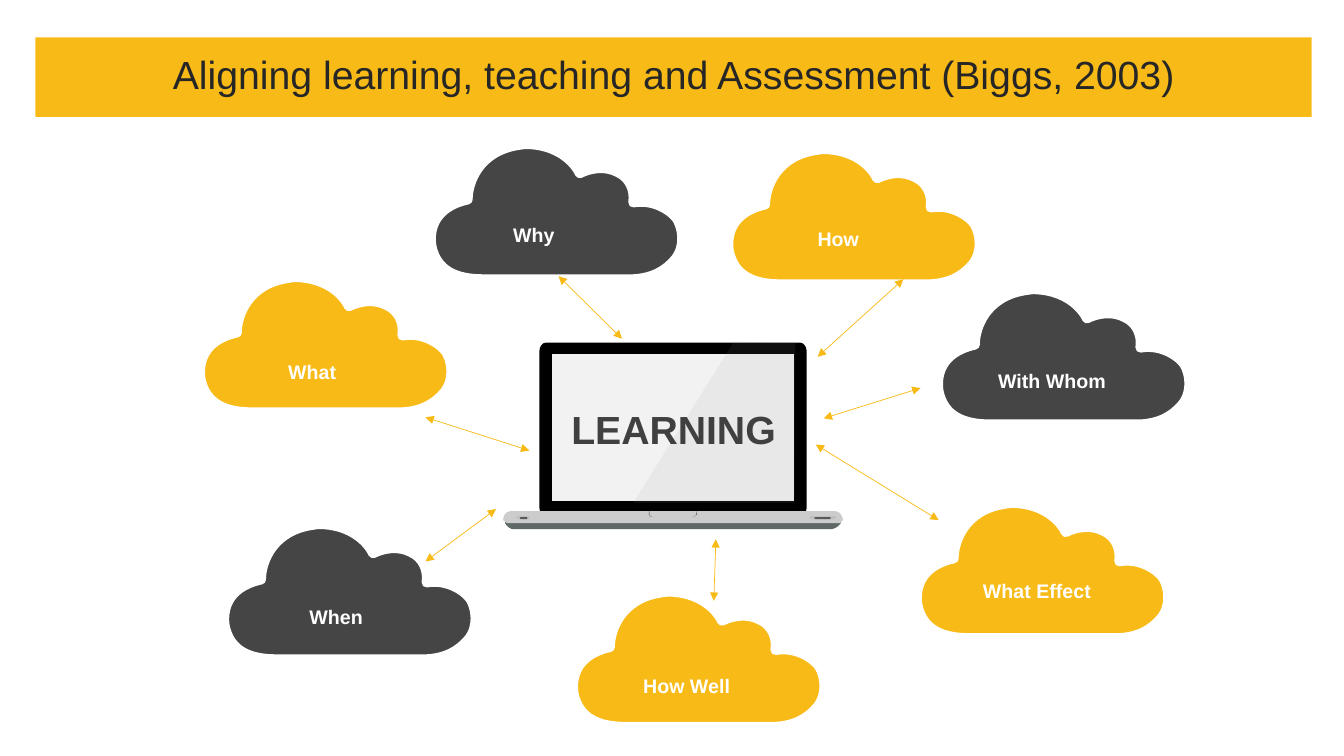
import pptx
import pptx.util
import pptx.oxml
import pptx.oxml.xmlchemy
from pptx.dml.color import RGBColor
from pptx.enum.shapes import MSO_CONNECTOR, MSO_SHAPE
from pptx.enum.text import MSO_ANCHOR, MSO_AUTO_SIZE, PP_ALIGN
from pptx.oxml.ns import qn

Inches, Pt = pptx.util.Inches, pptx.util.Pt
new_element = pptx.oxml.xmlchemy.OxmlElement

YELLOW = RGBColor(0xF8, 0xBA, 0x16)
DARK = RGBColor(0x45, 0x45, 0x45)
WHITE = RGBColor(0xFF, 0xFF, 0xFF)
INK = RGBColor(0x26, 0x26, 0x26)
BLACK = RGBColor(0x00, 0x00, 0x00)
SCREEN = RGBColor(0xF2, 0xF2, 0xF2)
SCREEN_TEXT = RGBColor(0x40, 0x40, 0x40)
BASE = RGBColor(0xCC, 0xCC, 0xCC)
LIP = RGBColor(0x5F, 0x67, 0x67)
NOTCH = RGBColor(0x4D, 0x4D, 0x4D)
PORT = RGBColor(0xBF, 0xBF, 0xBF)
SLOT = RGBColor(0x59, 0x59, 0x59)
GLARE = RGBColor(0x99, 0x99, 0x99)

# Outlines: a start point, then lines (x, y) or Bezier curves (x1, y1, x2, y2, x, y)
CLOUD = [(0.93, 0), (1.25, 0, 1.42, 0.18, 1.47, 0.29), (1.57, 0.24, 1.72, 0.21, 1.85, 0.28),
         (1.96, 0.33, 2.02, 0.45, 2, 0.58), (2.22, 0.54, 2.4, 0.68, 2.44, 0.75),
         (2.49, 0.84, 2.52, 1.01, 2.42, 1.14), (2.32, 1.26, 2.19, 1.33, 2, 1.34),
         (0.51, 1.34), (0.25, 1.34, 0.05, 1.26, 0, 1.01), (-0.02, 0.88, 0, 0.63, 0.36, 0.55),
         (0.36, 0.38, 0.47, 0.07, 0.86, 0.01), (0.88, 0.01, 0.9, 0, 0.93, 0)]
LAPTOP = [
    ([(3.28, 1.86), (3.28, 1.86, 3.34, 1.85, 3.37, 1.8), (3.37, 1.78, 3.36, 1.76, 3.34, 1.76),
      (0.04, 1.78), (0.04, 1.8), (0.06, 1.84, 0.1, 1.86, 0.12, 1.86)], LIP),
    ([(3.03, 1.65), (3.03, 1.69, 3, 1.73, 2.97, 1.73), (0.44, 1.73),
      (0.41, 1.73, 0.38, 1.69, 0.38, 1.65), (0.38, 0.09), (0.38, 0.05, 0.41, 0.01, 0.44, 0.01),
      (2.97, 0.01), (3, 0.01, 3.03, 0.05, 3.03, 0.09)], BLACK),
    ([(0.5, 0.12), (2.91, 0.12), (2.91, 1.58), (0.5, 1.58)], SCREEN),
    ([(0.1, 1.68), (3.31, 1.68), (3.35, 1.68, 3.39, 1.72, 3.39, 1.77), (3.36, 1.8),
      (0.06, 1.8), (0.02, 1.77), (0.02, 1.72, 0.05, 1.68, 0.1, 1.68)], BASE),
    ([(1.47, 1.68), (1.47, 1.72, 1.47, 1.74, 1.5, 1.74), (1.46, 1.73, 1.46, 1.71, 1.47, 1.68)], NOTCH),
    ([(1.94, 1.68), (1.95, 1.71, 1.94, 1.73, 1.9, 1.74), (1.93, 1.74, 1.94, 1.72, 1.94, 1.68)], NOTCH)]
GLARE_OUTLINE = [(2.31, 0), (2.92, 0.01), (2.91, 1.6), (1.31, 1.6)]
PORTS = [(0.16, 1.73, 0.12, 0.03, PORT), (0.19, 1.74, 0.07, 0.02, SLOT),
         (3.06, 1.73, 0.26, 0.03, PORT), (3.11, 1.74, 0.16, 0.02, SLOT)]

# Label, cloud left and top, label offset inside the cloud, colour
QUESTIONS = [("What", 1.99, 2.75, 0.77, 0.77, YELLOW), ("Why", 4.28, 1.43, 0.71, 0.73, DARK),
             ("How", 7.23, 1.48, 0.78, 0.72, YELLOW), ("With Whom", 9.31, 2.87, 0.49, 0.74, DARK),
             ("What Effect", 9.1, 4.99, 0.55, 0.7, YELLOW), ("When", 2.23, 5.2, 0.74, 0.75, DARK),
             ("How Well", 5.69, 5.87, 0.59, 0.76, YELLOW)]
ARROWS = [(5.54, 2.74, 6.17, 3.36), (8.09, 4.41, 9.31, 5.16), (4.22, 4.14, 5.25, 4.47),
          (8.96, 2.77, 8.11, 3.54), (4.92, 5.05, 4.22, 5.57), (7.1, 5.35, 7.08, 5.96),
          (8.17, 4.15, 9.13, 3.85)]


def paint(sp, color):
    sp.shadow.inherit = False
    sp.fill.solid()
    sp.fill.fore_color.rgb = color
    sp.line.fill.background()


def add_outline(shapes, left, top, outline, color):
    points = [(Inches(left + seg[-2]), Inches(top + seg[-1])) for seg in outline]
    builder = shapes.build_freeform(*points[0], scale=1.0)
    builder.add_line_segments(points[1:], close=True)
    sp = builder.convert_to_shape()
    # Bend the segments that have control points
    x0, y0 = min(x for x, _ in points), min(y for _, y in points)
    for line, seg in zip(list(sp._element.iter(qn("a:lnTo"))), outline[1:]):
        if len(seg) == 6:
            curve = new_element("a:cubicBezTo")
            for x, y in zip(seg[::2], seg[1::2]):
                pt = new_element("a:pt")
                pt.set("x", str(Inches(left + x) - x0))
                pt.set("y", str(Inches(top + y) - y0))
                curve.append(pt)
            line.getparent().replace(line, curve)
    paint(sp, color)
    return sp


def write(tf, text, align, size, color, bold=False):
    p = tf.paragraphs[0]
    p.alignment = align
    r = p.add_run()
    r.text = text
    for name, value in {"name": "Arial", "size": Pt(size), "bold": bold}.items():
        setattr(r.font, name, value)
    r.font.color.rgb = color
    return p


def add_label(slide, box, text, align, size, color, anchor):
    tf = slide.shapes.add_textbox(*map(Inches, box)).text_frame
    for name, value in {"word_wrap": True, "vertical_anchor": anchor,
                        "auto_size": MSO_AUTO_SIZE.SHAPE_TO_FIT_TEXT}.items():
        setattr(tf, name, value)
    write(tf, text, align, size, color, bold=True)


def add_title(slide, left, top, width, height):
    sp = slide.shapes.title
    for name, value in {"left": left, "top": top, "width": width, "height": height}.items():
        setattr(sp, name, Inches(value))
    sp.fill.solid()
    sp.fill.fore_color.rgb = YELLOW
    tf = sp.text_frame
    tf.auto_size = MSO_AUTO_SIZE.NONE
    tf.vertical_anchor = MSO_ANCHOR.MIDDLE
    p = write(tf, "Aligning learning, teaching and Assessment (Biggs, 2003)",
              PP_ALIGN.CENTER, 28, INK)
    p.line_spacing = 0.9


def add_laptop(slide, left, top):
    shapes = slide.shapes.add_group_shape().shapes
    for outline, color in LAPTOP:
        add_outline(shapes, left, top, outline, color)
    for x, y, width, height, color in PORTS:
        sp = shapes.add_shape(MSO_SHAPE.ROUNDED_RECTANGLE, Inches(left + x), Inches(top + y),
                              Inches(width), Inches(height))
        sp.adjustments[0] = 0.28
        paint(sp, color)
    # Translucent reflection on the screen
    glare = add_outline(shapes, left, top, GLARE_OUTLINE, GLARE)
    alpha = new_element("a:alpha")
    alpha.set("val", "10000")
    glare._element.spPr.find(qn("a:solidFill"))[0].append(alpha)
    add_label(slide, (left + 0.43, top + 0.58, 2.56, 0.57), "LEARNING",
              PP_ALIGN.CENTER, 28, SCREEN_TEXT, MSO_ANCHOR.TOP)


def add_cloud(slide, text, left, top, dx, dy, color):
    sp = add_outline(slide.shapes, left, top, CLOUD, color)
    sp.line.color.rgb = WHITE
    sp.line.width = Pt(7)
    add_label(slide, (left + dx, top + dy, 1.51, 0.34), text,
              PP_ALIGN.LEFT, 14, WHITE, MSO_ANCHOR.MIDDLE)


def add_arrow(slide, *ends):
    cx = slide.shapes.add_connector(MSO_CONNECTOR.STRAIGHT, *map(Inches, ends))
    cx.line.color.rgb = YELLOW
    cx.line.width = Pt(0.5)
    for tag in ("a:headEnd", "a:tailEnd"):
        end = new_element(tag)
        end.set("type", "triangle")
        cx._element.spPr.find(qn("a:ln")).append(end)
    cx._element.spPr.append(new_element("a:effectLst"))


def main():
    prs = pptx.Presentation()
    prs.slide_width, prs.slide_height = Inches(13.33), Inches(7.5)
    slide = prs.slides.add_slide(prs.slide_layouts[5])
    add_title(slide, 0.35, 0.37, 12.66, 0.79)
    add_laptop(slide, 4.97, 3.39)
    for question in QUESTIONS:
        add_cloud(slide, *question)
    for arrow in ARROWS:
        add_arrow(slide, *arrow)
    prs.save("out.pptx")


if __name__ == "__main__":
    main()
